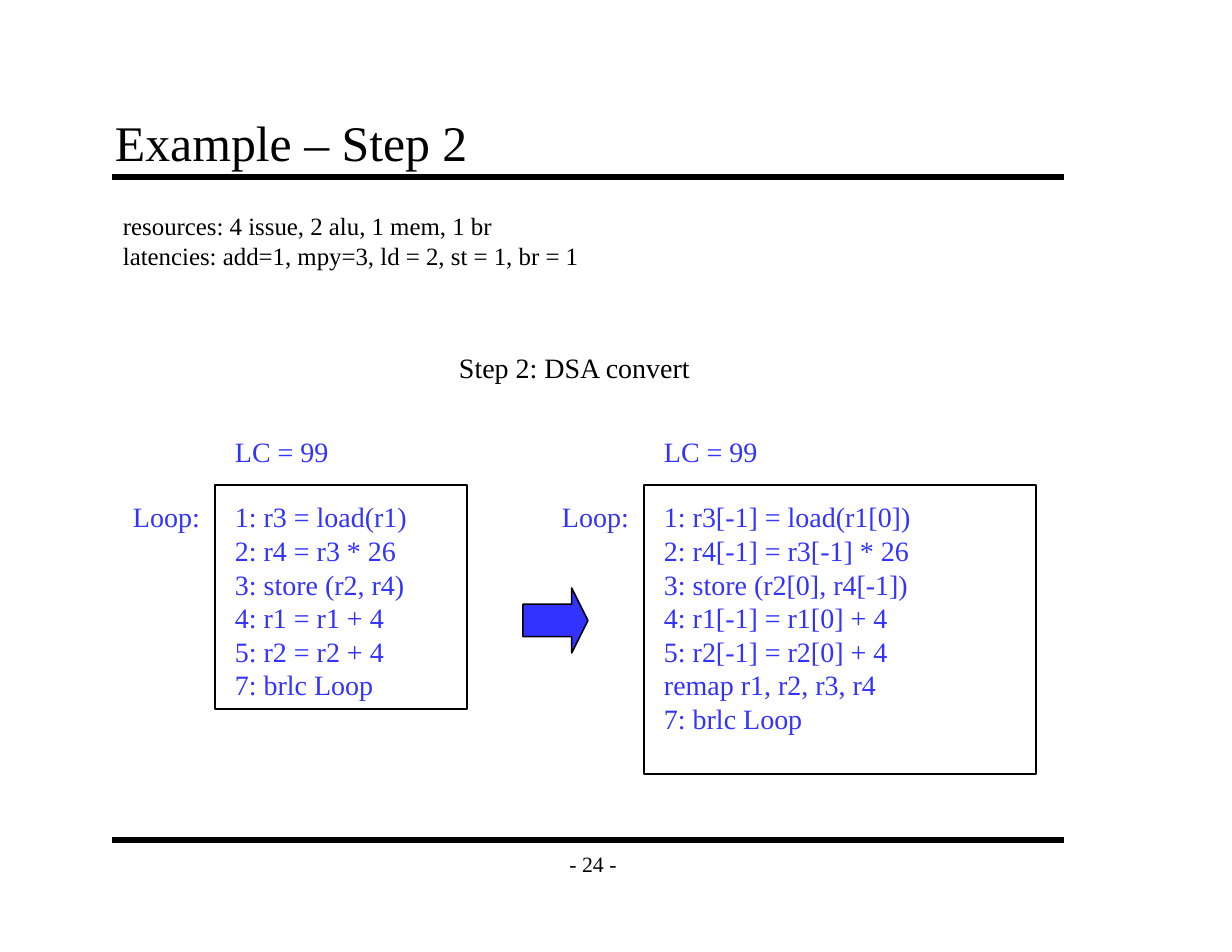
"""Build the "Example – Step 2" slide on DSA conversion of a loop."""
from pptx import Presentation
from pptx import util as u
from pptx.dml.color import RGBColor
from pptx.enum import shapes, text
from pptx.oxml.ns import qn

BLACK = RGBColor(0x00, 0x00, 0x00)
BLUE = RGBColor(0x33, 0x33, 0xFF)
FONT = "Times New Roman"
MIDDLE = text.MSO_ANCHOR.MIDDLE
BOTTOM = text.MSO_ANCHOR.BOTTOM


def px(length):
    return u.Emu(round(length * 914400 / 112))


def add_text(box, lines, size, color=BLACK, align=text.PP_ALIGN.LEFT,
             anchor=text.MSO_ANCHOR.TOP, wrap=False, inset=(11, 6)):
    frame = slide.shapes.add_textbox(*map(px, box)).text_frame
    frame.word_wrap = wrap
    frame.vertical_anchor = anchor
    frame.margin_left = frame.margin_right = px(inset[0])
    frame.margin_top = frame.margin_bottom = px(inset[1])
    for number, line in enumerate(lines):
        paragraph = frame.add_paragraph() if number else frame.paragraphs[0]
        paragraph.alignment = align
        run = paragraph.add_run()
        run.text = line
        run.font.name = FONT
        run.font.size = u.Pt(size)
        run.font.color.rgb = color


deck = Presentation()
deck.slide_width, deck.slide_height = px(1232), px(952)
slide = deck.slides.add_slide(deck.slide_layouts[6])

for rule_y in (177, 840):
    rule = slide.shapes.add_connector(
        shapes.MSO_CONNECTOR.STRAIGHT, px(112), px(rule_y), px(1064), px(rule_y))
    rule.line.color.rgb = BLACK
    rule.line.width = u.Pt(4)
    properties = rule._element.spPr
    properties.append(properties.makeelement(qn("a:effectLst"), {}))

add_text((551, 840, 84, 47), ["- 24 -"], 14,
         align=text.PP_ALIGN.CENTER, anchor=MIDDLE, inset=(12, 7))
add_text((103, 103, 952, 75), ["Example – Step 2"], 32,
         anchor=BOTTOM, wrap=True, inset=(12, 7))
add_text((112, 205, 479, 72), [
    "resources: 4 issue, 2 alu, 1 mem, 1 br",
    "latencies: add=1, mpy=3, ld = 2, st = 1, br = 1",
], 16)
add_text((448, 345, 255, 45), ["Step 2: DSA convert"], 18)

arrow = slide.shapes.add_shape(
    shapes.MSO_SHAPE.RIGHT_ARROW, px(523), px(588), px(65), px(65))
arrow.adjustments[0], arrow.adjustments[1] = 0.5, 0.25
arrow.shadow.inherit = False
arrow.fill.solid()
arrow.fill.fore_color.rgb = BLUE
arrow.line.color.rgb = BLACK
arrow.line.width = u.Pt(1)

original_code = [
    "1: r3 = load(r1)",
    "2: r4 = r3 * 26",
    "3: store (r2, r4)",
    "4: r1 = r1 + 4",
    "5: r2 = r2 + 4",
    "7: brlc Loop",
]
converted_code = [
    "1: r3[-1] = load(r1[0])",
    "2: r4[-1] = r3[-1] * 26",
    "3: store (r2[0], r4[-1])",
    "4: r1[-1] = r1[0] + 4",
    "5: r2[-1] = r2[0] + 4",
    "remap r1, r2, r3, r4",
    "7: brlc Loop",
]
loops = [
    (215, 252, 224, 195, 213, original_code),
    (644, 392, 289, 269, 246, converted_code),
]
for left, width, height, code_width, code_height, code in loops:
    add_text((left + 9, 494, code_width, code_height), code, 18, BLUE)
    loop_frame = slide.shapes.add_shape(
        shapes.MSO_SHAPE.RECTANGLE, px(left), px(485), px(width), px(height))
    loop_frame.shadow.inherit = False
    loop_frame.fill.background()
    loop_frame.line.color.rgb = BLACK
    loop_frame.line.width = u.Pt(1)
    add_text((left - 93, 494, 90, 45), ["Loop:"], 18, BLUE)
    add_text((left + 9, 429, 116, 45), ["LC = 99"], 18, BLUE)

deck.save("out.pptx")
